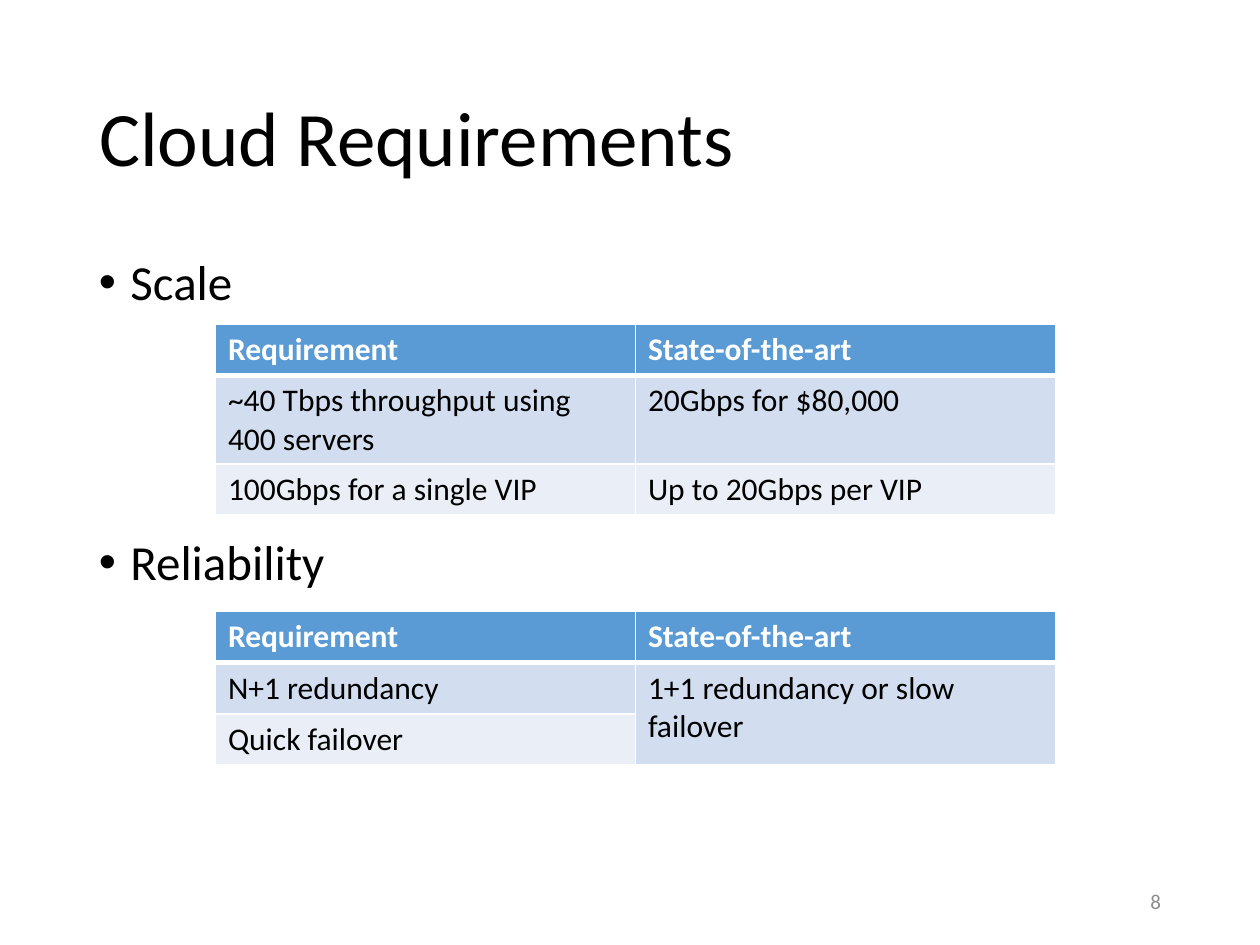
from lxml.etree import SubElement
from pptx import Presentation
from pptx.dml.color import RGBColor
from pptx.enum.text import MSO_ANCHOR, PP_ALIGN
from pptx.oxml.ns import qn
from pptx.util import Pt

FONT = "Calibri"
BLACK, WHITE, GREY = "000000", "FFFFFF", "8C8C8C"
HEAD, BANDS = "5B9BD5", ("D2DEEF", "EAEFF7")
LEFT, WIDTH = 49.5, 621
ROW = 29.2
TITLES = ["Requirement", "State-of-the-art"]


def paint(form, color):
    """Give a fill or a font a solid colour."""
    if hasattr(form, "solid"):
        form.solid()
        form.fore_color.rgb = RGBColor.from_string(color)
    else:
        form.color.rgb = RGBColor.from_string(color)


def add_run(para, text, size, color=BLACK, bold=False):
    run = para.add_run()
    run.text = text
    run.font.name = FONT
    run.font.size = Pt(size)
    run.font.bold = bold
    paint(run.font, color)


def set_title(slide, text):
    title = slide.shapes.title
    title.left, title.top = Pt(LEFT), Pt(28.75)
    title.width, title.height = Pt(WIDTH), Pt(104.4)
    title.text_frame.vertical_anchor = MSO_ANCHOR.MIDDLE
    para = title.text_frame.paragraphs[0]
    para.alignment = PP_ALIGN.LEFT
    para.line_spacing = 0.9
    add_run(para, text, 44)


def add_box(slide, left, top, width, height):
    box = slide.shapes.add_textbox(Pt(left), Pt(top), Pt(width), Pt(height))
    box.text_frame.word_wrap = True
    return box.text_frame


def add_list(slide, items):
    """Add bullets from pairs of text and space before."""
    frame = add_box(slide, LEFT, 143.75, WIDTH, 342.6)
    for i, (text, gap) in enumerate(items):
        para = frame.add_paragraph() if i else frame.paragraphs[0]
        para.line_spacing = 0.9
        para.space_before = Pt(gap)
        props = para._p.get_or_add_pPr()
        props.set("marL", str(Pt(18)))
        props.set("indent", str(-Pt(18)))
        SubElement(props, qn("a:buFont"), typeface="Arial")
        SubElement(props, qn("a:buChar"), char="•")
        add_run(para, text, 28)


def add_number(slide, text):
    frame = add_box(slide, 508.5, 500.5, 162, 28.75)
    frame.vertical_anchor = MSO_ANCHOR.MIDDLE
    para = frame.paragraphs[0]
    para.alignment = PP_ALIGN.RIGHT
    add_run(para, text, 12, GREY)


def add_borders(cell, top, bottom):
    props = cell._tc.get_or_add_tcPr()
    for side, width in zip("LRTB", (1, 1, top, bottom)):
        line = SubElement(props, qn(f"a:ln{side}"), w=str(Pt(width)))
        fill = SubElement(line, qn("a:solidFill"))
        SubElement(fill, qn("a:srgbClr"), val=WHITE)


def add_grid(slide, top, rows, heights):
    """Add a banded table; None marks a cell joined to the one above."""
    frame = slide.shapes.add_table(len(rows), 2, Pt(123.1), Pt(top),
                                   Pt(480), Pt(sum(heights)))
    table = frame.table
    for col in table.columns:
        col.width = Pt(240)
    for r, (texts, height) in enumerate(zip(rows, heights)):
        table.rows[r].height = Pt(height)
        for c, text in enumerate(texts):
            cell = table.cell(r, c)
            add_borders(cell, 3 if r == 1 else 1, 1 if r else 3)
            paint(cell.fill, BANDS[(r - 1) % 2] if r else HEAD)
            if text is None:
                table.cell(r - 1, c).merge(cell)
            else:
                add_run(cell.text_frame.paragraphs[0], text, 18,
                        BLACK if r else WHITE, r == 0)


def main():
    deck = Presentation()
    deck.slide_width, deck.slide_height = Pt(720), Pt(540)
    slide = deck.slides.add_slide(deck.slide_layouts[5])
    set_title(slide, "Cloud Requirements")
    add_list(slide, [("Scale", 10), ("Reliability", 130)])
    add_grid(slide, 185.4, [
        TITLES,
        ["~40 Tbps throughput using 400 servers", "20Gbps for $80,000"],
        ["100Gbps for a single VIP", "Up to 20Gbps per VIP"],
    ], [ROW, 50.4, ROW])
    add_grid(slide, 349.5, [
        TITLES,
        ["N+1 redundancy", "1+1 redundancy or slow failover"],
        ["Quick failover", None],
    ], [ROW] * 3)
    add_number(slide, "8")
    deck.save("out.pptx")


if __name__ == "__main__":
    main()
